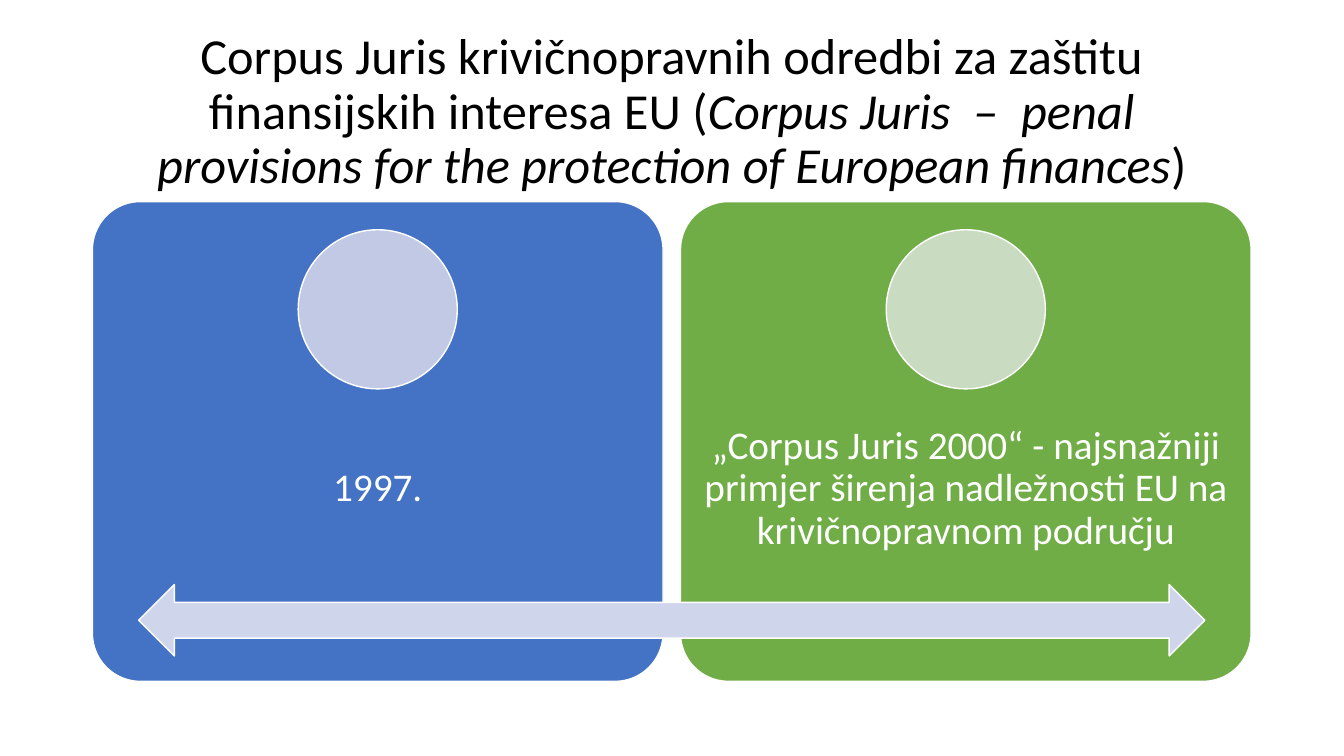
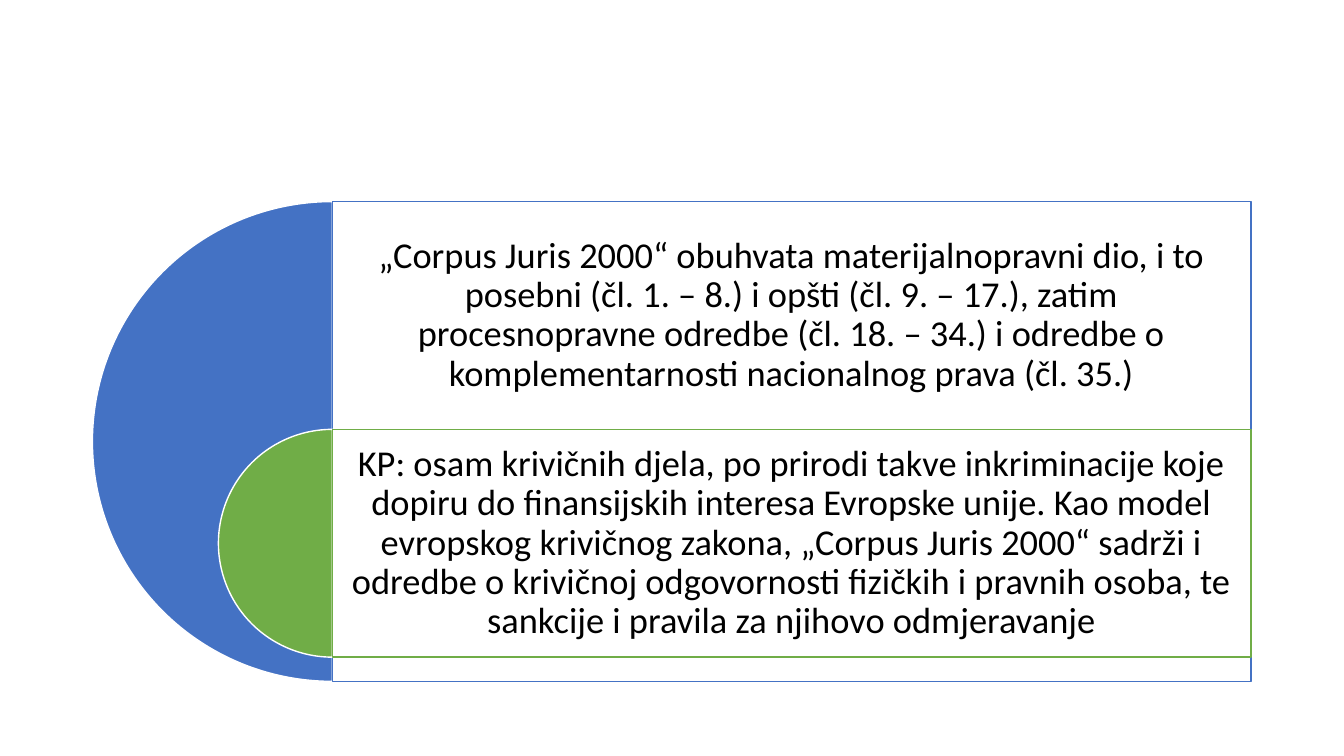
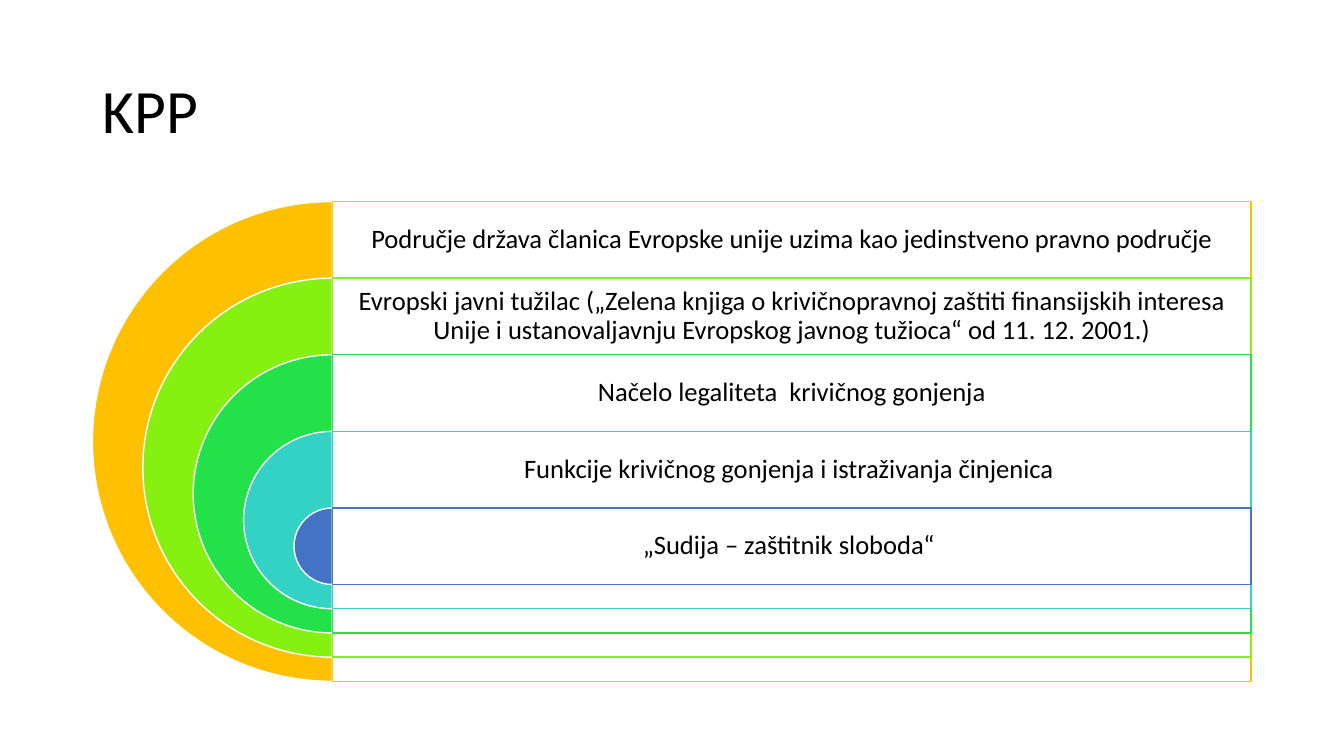
from lxml import etree
from pptx import Presentation
from pptx.dml.color import RGBColor
from pptx.enum.shapes import MSO_SHAPE as Shape
from pptx.enum.text import MSO_ANCHOR as Anchor, PP_ALIGN as Align
from pptx.oxml.ns import qn
from pptx.util import Cm, Pt

# Content
CORPUS_TITLE = [
    ("Corpus Juris krivičnopravnih odredbi za zaštitu finansijskih interesa EU (", False),
    ("Corpus Juris  –  penal provisions for the protection of European finances", True),
    (")", False),
]
CARDS = [
    ("1997.", "4472C4", "C1C9E4"),
    ("„Corpus Juris 2000“ - najsnažniji primjer širenja nadležnosti EU na "
     "krivičnopravnom području", "70AD47", "C9DBC1"),
]
CONTENTS = [
    ("„Corpus Juris 2000“ obuhvata materijalnopravni dio, i to posebni (čl. 1. – 8.) "
     "i opšti (čl. 9. – 17.), zatim procesnopravne odredbe (čl. 18. – 34.) i odredbe o "
     "komplementarnosti nacionalnog prava (čl. 35.)", "4472C4"),
    ("KP: osam krivičnih djela, po prirodi takve inkriminacije koje dopiru do "
     "finansijskih interesa Evropske unije. Kao model evropskog krivičnog zakona, "
     "„Corpus Juris 2000“ sadrži i odredbe o krivičnoj odgovornosti fizičkih i pravnih "
     "osoba, te sankcije i pravila za njihovo odmjeravanje", "70AD47"),
]
KPP_TITLE = [("KPP", False)]
PROCEDURE = [
    ("Područje država članica Evropske unije uzima kao jedinstveno pravno područje",
     "FFC000"),
    ("Evropski javni tužilac („Zelena knjiga o krivičnopravnoj zaštiti finansijskih "
     "interesa Unije i ustanovaljavnju Evropskog javnog tužioca“ od 11. 12. 2001.)",
     "86F011"),
    ("Načelo legaliteta  krivičnog gonjenja", "23E148"),
    ("Funkcije krivičnog gonjenja i istraživanja činjenica ", "33D2C5"),
    ("„Sudija – zaštitnik sloboda“ ", "4472C4"),
]

# Shared style and frame, lengths in cm
FONT, BLACK, WHITE, ARROW = "Calibri", "000000", "FFFFFF", "CFD5EA"
LEFT, TOP, WIDTH, HEIGHT = 2.33, 5.08, 29.2, 12.09
TITLE_TOP, TITLE_HEIGHT = 1.01, 3.68
CARD_GAP = 0.44
RING_GAP = 0.61


def color(hex_string):
    return RGBColor.from_string(hex_string)


def add_figure(slide, kind, left, top, width, height, fill, line=WHITE,
               adjust=(), opacity=None):
    figure = slide.shapes.add_shape(kind, Cm(left), Cm(top), Cm(width), Cm(height))
    figure.shadow.inherit = False
    figure.fill.solid()
    figure.fill.fore_color.rgb = color(fill)
    figure.line.color.rgb = color(line)
    figure.line.width = Pt(1)
    for index, value in enumerate(adjust):
        figure.adjustments[index] = value
    if opacity is not None:
        tint = figure.fill._xPr.find(qn("a:solidFill"))[0]
        etree.SubElement(tint, qn("a:alpha")).set("val", str(opacity * 1000))


def add_text(slide, parts, left, top, width, height, size, ink=BLACK,
             align=Align.CENTER, inset=(0.25, 0.13)):
    frame = slide.shapes.add_textbox(Cm(left), Cm(top), Cm(width), Cm(height)).text_frame
    frame.word_wrap = True
    frame.vertical_anchor = Anchor.MIDDLE
    frame.margin_left = frame.margin_right = Cm(inset[0])
    frame.margin_top = frame.margin_bottom = Cm(inset[1])
    paragraph = frame.paragraphs[0]
    paragraph.alignment = align
    paragraph.line_spacing = 0.9
    for words, italic in parts:
        run = paragraph.add_run()
        run.text = words
        run.font.name = FONT
        run.font.size = Pt(size)
        run.font.italic = italic
        run.font.color.rgb = color(ink)


def add_title(slide, parts, size, align):
    add_text(slide, parts, LEFT, TITLE_TOP, WIDTH, TITLE_HEIGHT, size, align=align)


def add_cards(slide, cards):
    card_width = (WIDTH - CARD_GAP * (len(cards) - 1)) / len(cards)
    disc = 4.01
    for index, (words, fill, disc_fill) in enumerate(cards):
        left = LEFT + index * (card_width + CARD_GAP)
        add_figure(slide, Shape.ROUNDED_RECTANGLE, left, TOP, card_width, HEIGHT,
                   fill, adjust=[0.1])
        add_text(slide, [(words, False)], left, 9.91, card_width, 4.83, 28,
                 ink=WHITE, inset=(0.56, 0.56))
        add_figure(slide, Shape.OVAL, left + (card_width - disc) / 2, 5.79,
                   disc, disc, disc_fill)
    # Arrow across all cards
    arrow_width = 26.87
    add_figure(slide, Shape.LEFT_RIGHT_ARROW, LEFT + (WIDTH - arrow_width) / 2, 14.73,
               arrow_width, 1.8, ARROW)


def add_nested_rings(slide, rings, size, inset):
    """Half discs, each inside the one before, with a framed text row beside each."""
    row_height = (HEIGHT - RING_GAP * (len(rings) - 1)) / len(rings)
    axis = LEFT + HEIGHT / 2
    row_width = LEFT + WIDTH - axis
    for index, (words, fill) in enumerate(rings):
        top = TOP + index * row_height
        diameter = HEIGHT - index * (row_height + RING_GAP)
        add_figure(slide, Shape.PIE, axis - diameter / 2, top, diameter, diameter,
                   fill, adjust=[54, 162])
        add_figure(slide, Shape.RECTANGLE, axis, top, row_width, diameter,
                   WHITE, line=fill, opacity=90)
        add_text(slide, [(words, False)], axis, top, row_width, row_height, size,
                 inset=(inset, inset))


def main():
    deck = Presentation()
    deck.slide_width, deck.slide_height = Cm(33.87), Cm(19.05)
    blank = deck.slide_layouts[6]
    corpus, contents, procedure = [deck.slides.add_slide(blank) for _ in range(3)]

    # Corpus Juris and its second version
    add_title(corpus, CORPUS_TITLE, 36, Align.CENTER)
    add_cards(corpus, CARDS)

    # What Corpus Juris 2000 covers
    add_nested_rings(contents, CONTENTS, 26, 0.28)

    # Criminal procedure
    add_title(procedure, KPP_TITLE, 44, Align.LEFT)
    add_nested_rings(procedure, PROCEDURE, 19, 0.2)

    deck.save("out.pptx")


if __name__ == "__main__":
    main()
